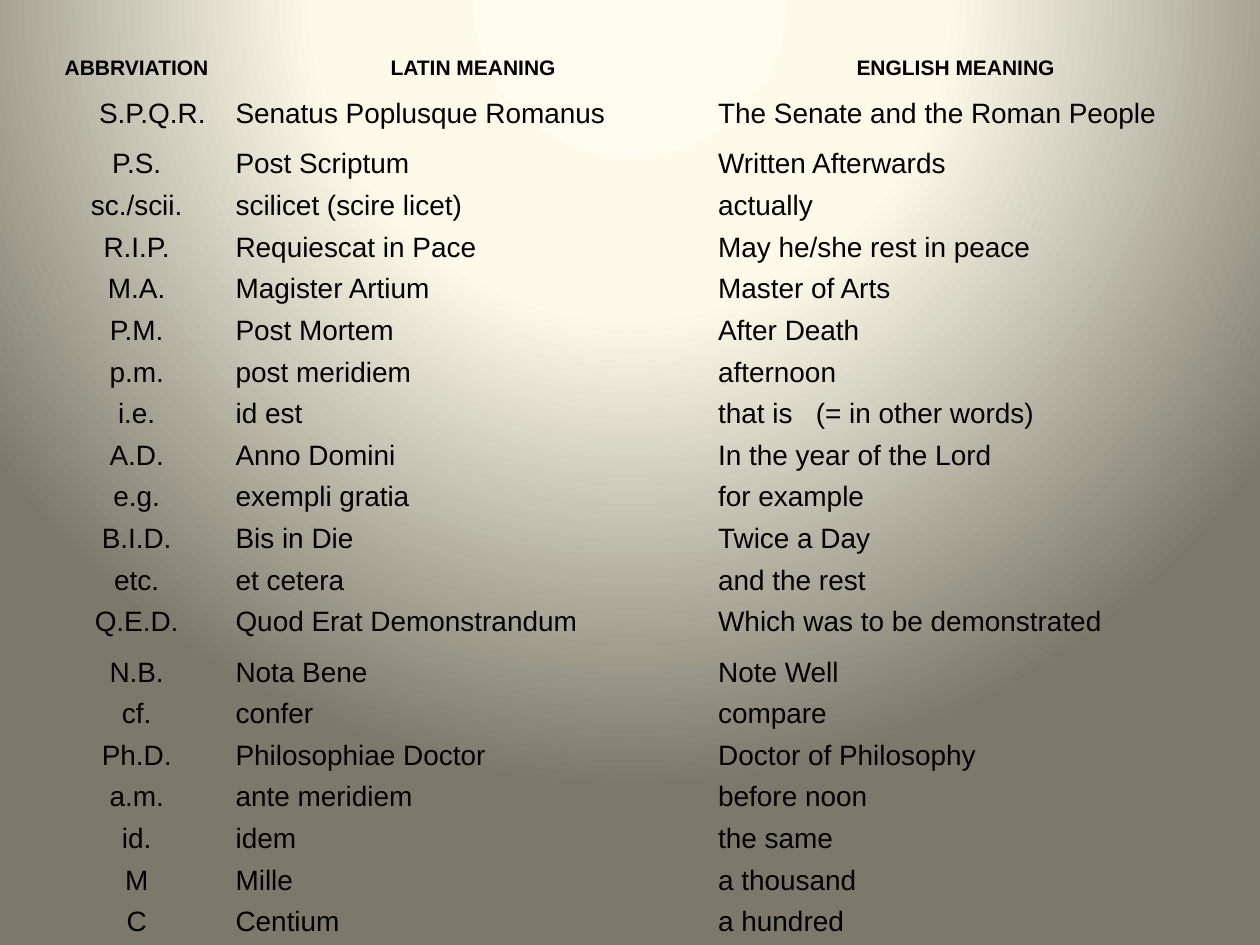
from pptx import Presentation
from pptx.dml.color import RGBColor
from pptx.enum.text import MSO_ANCHOR, PP_ALIGN
from pptx.oxml import parse_xml
from pptx.oxml.ns import nsdecls, qn
from pptx.util import Inches, Pt

CENTER, LEFT = PP_ALIGN.CENTER, PP_ALIGN.LEFT
TOP = MSO_ANCHOR.TOP
NO_STYLE_NO_GRID = "{2D5ABB26-0587-4C30-8999-92F81FD0307C}"

INSET = 0.03
ABBREVIATION_INDENT = 0.25
TABLE_LEFT, TABLE_TOP = 0.33, 0.42
COLUMN_WIDTHS = [1.51, 3.83, 3.83]
TALL_ROWS = ["S.P.Q.R.", "Q.E.D."]
TALL_HEIGHT = 0.4

HEADER_FONT = {"name": "Arial", "size": Pt(12), "bold": True}
BODY_FONT = {"name": "Arial", "size": Pt(16), "bold": False}
GRADIENT_STOPS = [(0, "FEFCEE"), (40, "FDFAEA"), (100, "7B796B")]

ROWS = [
    ("ABBRVIATION", "LATIN MEANING", "ENGLISH MEANING"),
    ("S.P.Q.R.", "Senatus Poplusque Romanus", "The Senate and the Roman People"),
    ("P.S.", "Post Scriptum", "Written Afterwards"),
    ("sc./scii.", "scilicet (scire licet)", "actually"),
    ("R.I.P.", "Requiescat in Pace", "May he/she rest in peace"),
    ("M.A.", "Magister Artium", "Master of Arts"),
    ("P.M.", "Post Mortem", "After Death"),
    ("p.m.", "post meridiem", "afternoon"),
    ("i.e.", "id est", "that is   (= in other words)"),
    ("A.D.", "Anno Domini", "In the year of the Lord"),
    ("e.g.", "exempli gratia", "for example"),
    ("B.I.D.", "Bis in Die", "Twice a Day"),
    ("etc.", "et cetera", "and the rest"),
    ("Q.E.D.", "Quod Erat Demonstrandum", "Which was to be demonstrated"),
    ("N.B.", "Nota Bene", "Note Well"),
    ("cf.", "confer", "compare"),
    ("Ph.D.", "Philosophiae Doctor", "Doctor of Philosophy"),
    ("a.m.", "ante meridiem", "before noon"),
    ("id.", "idem", "the same"),
    ("M", "Mille", "a thousand"),
    ("C", "Centium", "a hundred"),
]

deck = Presentation()
deck.slide_width, deck.slide_height = Inches(10), Inches(7.5)
page = deck.slides.add_slide(deck.slide_layouts[6])

# Background: a round glow centred above the top edge
stops = "".join(
    f'<a:gs pos="{percent * 1000}"><a:srgbClr val="{color}"/></a:gs>'
    for percent, color in GRADIENT_STOPS
)
page.background.fill.gradient()
gradient = page.background._cSld.find(".//" + qn("a:gradFill"))
gradient.getparent().replace(gradient, parse_xml(
    f'<a:gradFill {nsdecls("a")} rotWithShape="1"><a:gsLst>{stops}</a:gsLst>'
    '<a:path path="circle">'
    '<a:fillToRect l="50000" t="-80000" r="50000" b="180000"/>'
    '</a:path></a:gradFill>'
))

# Table: runs down to the bottom edge of the slide
table_height = 7.5 - TABLE_TOP
row_height = (table_height - len(TALL_ROWS) * TALL_HEIGHT) / (len(ROWS) - len(TALL_ROWS))
frame = page.shapes.add_table(
    len(ROWS), len(COLUMN_WIDTHS), Inches(TABLE_LEFT), Inches(TABLE_TOP),
    Inches(sum(COLUMN_WIDTHS)), Inches(table_height),
)
table = frame.table
table.first_row = table.horz_banding = False
table._tbl.tblPr.find(qn("a:tableStyleId")).text = NO_STYLE_NO_GRID
for column, width in zip(table.columns, COLUMN_WIDTHS):
    column.width = Inches(width)

for row_index, texts in enumerate(ROWS):
    is_tall = texts[0] in TALL_ROWS
    table.rows[row_index].height = Inches(TALL_HEIGHT if is_tall else row_height)
    for column_index, text in enumerate(texts):
        cell = table.cell(row_index, column_index)
        cell.fill.background()
        cell.vertical_anchor = TOP
        for side in ("left", "right", "top", "bottom"):
            setattr(cell, f"margin_{side}", Inches(INSET))
        if text == "S.P.Q.R.":
            cell.margin_left = Inches(INSET + ABBREVIATION_INDENT)
        para = cell.text_frame.paragraphs[0]
        para.alignment = CENTER if row_index == 0 or column_index == 0 else LEFT
        span = para.add_run()
        span.text = text
        for name, value in (BODY_FONT if row_index else HEADER_FONT).items():
            setattr(span.font, name, value)
        span.font.color.rgb = RGBColor.from_string("000000")

deck.save("out.pptx")
